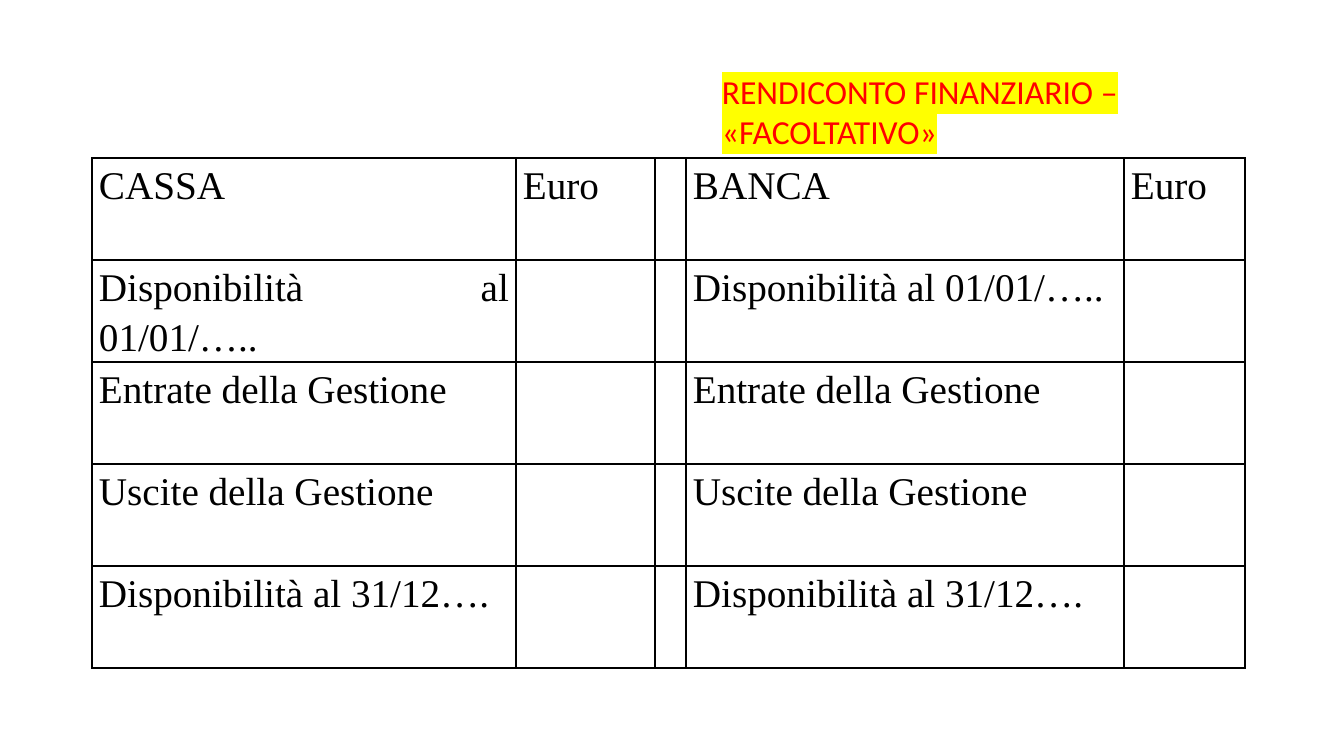
from dataclasses import dataclass

from lxml import etree
from pptx import Presentation
from pptx.dml.color import RGBColor
from pptx.enum.text import MSO_AUTO_SIZE, PP_ALIGN
from pptx.oxml.ns import qn
from pptx.slide import Slide
from pptx.table import _Cell
from pptx.text.text import _Paragraph
from pptx.util import Emu, Pt

JUSTIFY = PP_ALIGN.JUSTIFY
GROW = MSO_AUTO_SIZE.SHAPE_TO_FIT_TEXT
BLANK = 6

BLACK = "000000"
RED = "FF0000"
YELLOW = "FFFF00"

COLS = (424, 139, 31, 438, 121)
ROW = 102
LABELS = (
    "Disponibilità al 01/01/…..",
    "Entrate della Gestione",
    "Uscite della Gestione",
    "Disponibilità al 31/12….",
)
GRID = [("CASSA", "Euro", "", "BANCA", "Euro")]
GRID += [(label, "", "", label, "") for label in LABELS]


@dataclass(frozen=True)
class Box:
    left: int
    top: int
    width: int
    height: int


@dataclass(frozen=True)
class Style:
    font: str
    size: int
    color: str
    mark: str = ""


TITLE = Style("Calibri", 24, RED, YELLOW)
BODY = Style("Times New Roman", 28, BLACK)


def px(count: int) -> Emu:
    """Convert px, at 100.8 to the inch, into EMU."""
    return Emu(round(count * 914400 / 100.8))


def rgb(code: str) -> RGBColor:
    return RGBColor.from_string(code)


def add_run(para: _Paragraph, text: str, style: Style) -> None:
    run = para.add_run()
    run.text = text
    run.font.name = style.font
    run.font.size = Pt(style.size)
    run.font.color.rgb = rgb(style.color)
    if style.mark:
        fill = run.font._element.find(qn("a:solidFill"))
        mark = etree.Element(qn("a:highlight"))
        etree.SubElement(mark, qn("a:srgbClr"), val=style.mark)
        fill.addnext(mark)


def add_title(slide: Slide, box: Box, text: str) -> None:
    shape = slide.shapes.add_textbox(
        px(box.left), px(box.top), px(box.width), px(box.height)
    )
    frame = shape.text_frame
    frame.word_wrap = True
    frame.auto_size = GROW
    add_run(frame.paragraphs[0], text, TITLE)


def set_borders(cell: _Cell) -> None:
    props = cell._tc.get_or_add_tcPr()
    for place, side in enumerate(("lnL", "lnR", "lnT", "lnB")):
        line = etree.Element(qn(f"a:{side}"), w=str(Pt(1)))
        fill = etree.SubElement(line, qn("a:solidFill"))
        etree.SubElement(fill, qn("a:srgbClr"), val=BLACK)
        props.insert(place, line)


def fill_cell(cell: _Cell, text: str) -> None:
    cell.fill.background()
    set_borders(cell)
    cell.margin_left = cell.margin_right = px(7)
    cell.margin_top = cell.margin_bottom = 0
    if text:
        para = cell.text_frame.paragraphs[0]
        para.alignment = JUSTIFY
        para.line_spacing = 1.15
        para.space_after = Pt(10)
        add_run(para, text, BODY)


def add_grid(slide: Slide, left: int, top: int) -> None:
    table = slide.shapes.add_table(
        len(GRID), len(COLS), px(left), px(top), px(sum(COLS)), px(ROW * len(GRID))
    ).table
    table.first_row = table.horz_banding = False
    for col, width in zip(table.columns, COLS):
        col.width = px(width)
    for row, texts in zip(table.rows, GRID):
        row.height = px(ROW)
        for cell, text in zip(row.cells, texts):
            fill_cell(cell, text)


def main() -> None:
    deck = Presentation()
    deck.slide_width = px(1344)
    deck.slide_height = px(756)
    slide = deck.slides.add_slide(deck.slide_layouts[BLANK])
    add_grid(slide, 92, 158)
    add_title(slide, Box(712, 66, 584, 92), "RENDICONTO FINANZIARIO – «FACOLTATIVO»")
    deck.save("out.pptx")


if __name__ == "__main__":
    main()
